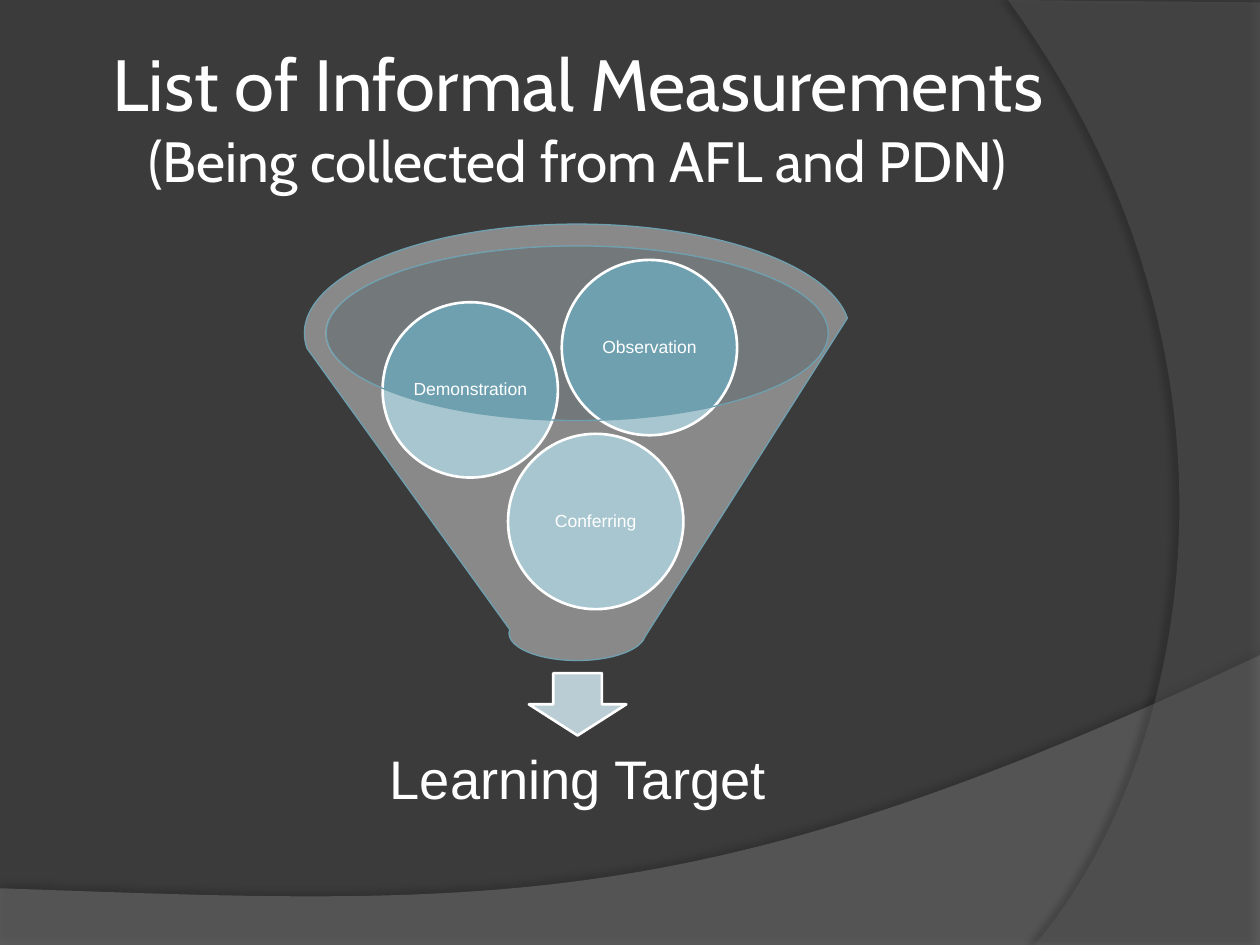
from lxml.etree import SubElement
from pptx import Presentation
from pptx.dml.color import RGBColor
from pptx.enum.shapes import MSO_SHAPE
from pptx.enum.text import MSO_ANCHOR, MSO_AUTO_SIZE, PP_ALIGN
from pptx.oxml.ns import qn
from pptx.util import Pt

WHITE, TEAL = "FFFFFF", "6EA0B0"


def color(code):
    return RGBColor.from_string(code)


def paint(shape, fill, alpha=100, line=None, width=1.5):
    shape.shadow.inherit = False
    shape.fill.solid()
    shape.fill.fore_color.rgb = color(fill)
    if alpha < 100:
        tone = shape.fill._xPr.find(qn("a:solidFill"))[0]
        SubElement(tone, qn("a:alpha"), val=str(alpha * 1000))
    if line:
        shape.line.color.rgb = color(line)
        shape.line.width = Pt(width)
    else:
        shape.line.fill.background()


def cast(shape, alpha, blur, dist, angle):
    """Give a painted shape an outer shadow."""
    effects = shape._element.spPr.find(qn("a:effectLst"))
    shade = SubElement(effects, qn("a:outerShdw"), blurRad=str(Pt(blur)),
                       dist=str(Pt(dist)), dir=str(angle * 60000),
                       algn="ctr", rotWithShape="0")
    tone = SubElement(shade, qn("a:srgbClr"), val="000000")
    SubElement(tone, qn("a:alpha"), val=str(alpha * 1000))


def write(shape, *runs, font="Arial", inset=0.7, spacing=0.9):
    """Fill a shape with one centred paragraph of (text, size) runs."""
    frame = shape.text_frame
    frame.word_wrap = True
    frame.auto_size = MSO_AUTO_SIZE.NONE
    frame.vertical_anchor = MSO_ANCHOR.MIDDLE
    frame.margin_left = frame.margin_right = Pt(inset)
    frame.margin_top = frame.margin_bottom = Pt(inset)
    para = frame.paragraphs[0]
    para.alignment = PP_ALIGN.CENTER
    para.line_spacing = spacing
    for text, size in runs:
        run = para.add_run()
        run.text = text
        run.font.name = font
        run.font.size = Pt(size)
        run.font.color.rgb = color(WHITE)


def add(slide, kind, x, y, w, h, **look):
    shape = slide.shapes.add_shape(kind, Pt(x), Pt(y), Pt(w), Pt(h))
    paint(shape, **look)
    return shape


def curve(a, b, c, d, steps=60):
    """Points along a cubic Bezier curve."""
    for i in range(steps + 1):
        t = i / steps
        u = 1 - t
        yield tuple(u**3 * p + 3 * u * u * t * q + 3 * u * t * t * r + t**3 * s
                    for p, q, r, s in zip(a, b, c, d))


def sweep(slide, corners, bend, fill, alpha):
    """Draw an outline of straight corners closed by one curve."""
    points = [(Pt(x), Pt(y)) for x, y in [*corners, *curve(*bend)]]
    maker = slide.shapes.build_freeform(*points[0])
    maker.add_line_segments(points[1:], close=True)
    shape = maker.convert_to_shape()
    paint(shape, fill, alpha)
    return shape


def main():
    deck = Presentation()
    deck.slide_width, deck.slide_height = Pt(720), Pt(540)
    slide = deck.slides.add_slide(deck.slide_layouts[5])
    slide.background.fill.solid()
    slide.background.fill.fore_color.rgb = color("3B3B3B")

    # Background sweeps
    low = sweep(slide, [(0, 507.6), (0, 540), (720, 540)],
                [(720, 374.4), (402.5, 524.9), (281.5, 517.7), (0, 507.6)],
                "7F7F7F", 45)
    cast(low, 35, 4, 3.5, 270)
    side = sweep(slide, [(720, 1.4), (720, 540)],
                 [(591.1, 540), (673.2, 445.7), (733, 216), (576, 0)],
                 "5E5E5E", 40)
    cast(side, 45, 4, 4, 180)

    # Title, in front of the sweeps
    title = slide.shapes.title
    title.left, title.top = Pt(36), Pt(21.6)
    title.width, title.height = Pt(588.2), Pt(90)
    write(title, ("List of Informal Measurements ", 41.4),
          ("(Being collected from AFL and PDN)", 32.4),
          font="Cabin", inset=3.6, spacing=1.0)
    slide.shapes._spTree.append(title._element)

    # Funnel mouth, arrow and outcome
    add(slide, MSO_SHAPE.OVAL, 185.8, 140.4, 287.3, 100,
        fill="C8D6DC", alpha=40)
    add(slide, MSO_SHAPE.DOWN_ARROW, 302.2, 384.7, 55.7, 35.6,
        fill="BACDD4", line=WHITE)
    goal = slide.shapes.add_textbox(Pt(196.4), Pt(413.2), Pt(267.3), Pt(66.8))
    write(goal, ("Learning Target", 31), inset=17)

    # Measures inside the funnel
    for name, x, y in [("Conferring", 290.3, 247.9),
                       ("Demonstration", 218.6, 172.7),
                       ("Observation", 321, 148.5)]:
        ball = add(slide, MSO_SHAPE.OVAL, x, y, 100.2, 100.2,
                   fill=TEAL, line=WHITE)
        write(ball, (name, 10))

    # Glass funnel over the measures
    add(slide, MSO_SHAPE.FUNNEL, 174, 128.1, 311.8, 249.4,
        fill=WHITE, alpha=40, line=TEAL, width=0.75)

    deck.save("out.pptx")


if __name__ == "__main__":
    main()
